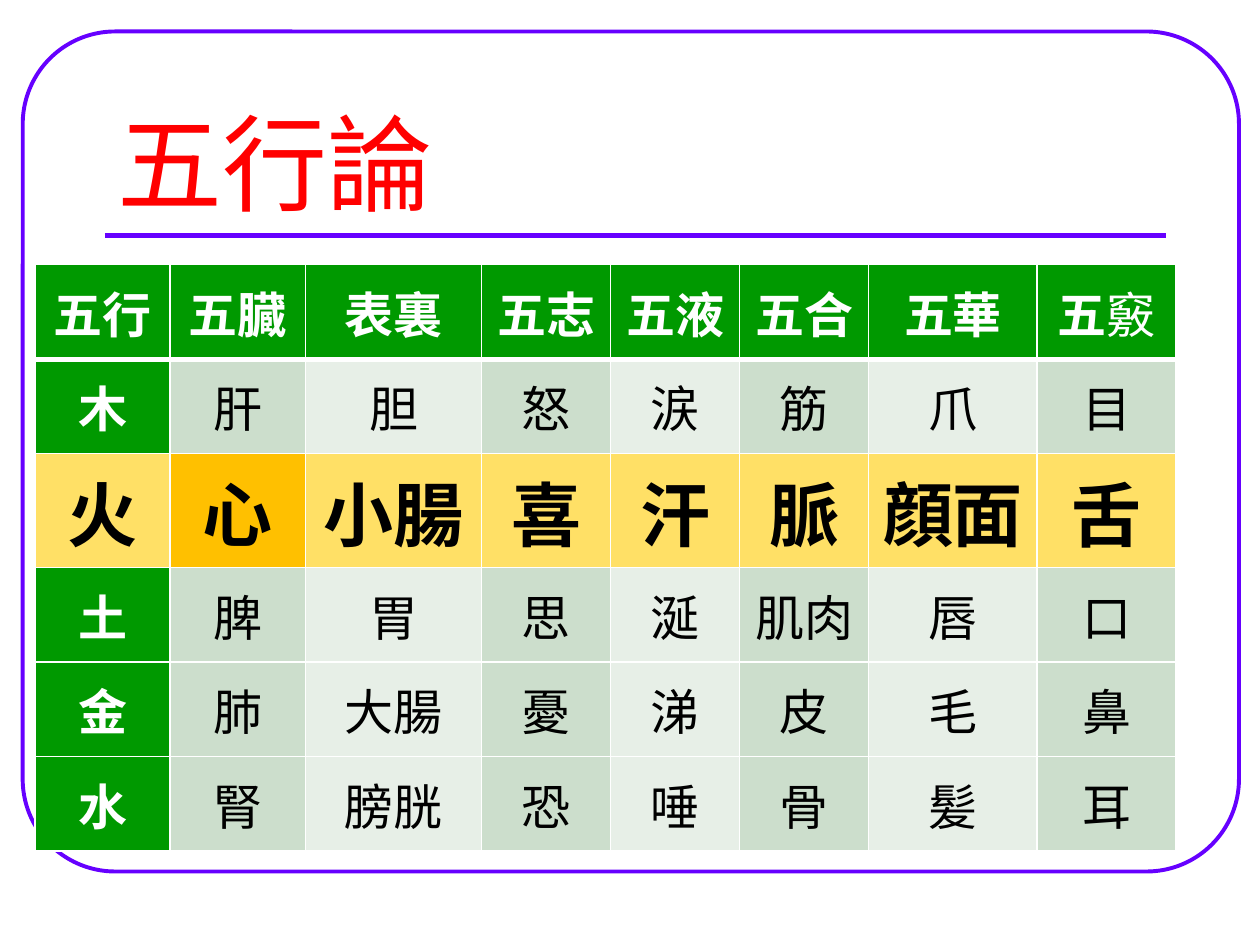
"""Build the five-elements theory slide with its framed table."""
import pptx
import pptx.util
import pptx.dml.color
import pptx.enum.shapes
import pptx.enum.text
import pptx.oxml
import pptx.oxml.ns

Pt = pptx.util.Pt


def color(value):
    return pptx.dml.color.RGBColor.from_string(value)


def style_span(span, values):
    span.font.color.rgb = color(values["color"])
    for name in ("name", "size", "bold"):
        setattr(span.font, name, values[name])


deck = pptx.Presentation()
deck.slide_width, deck.slide_height = Pt(720), Pt(540)
page = deck.slides.add_slide(deck.slide_layouts[5])

frame = page.shapes.add_shape(
    pptx.enum.shapes.MSO_SHAPE.ROUNDED_RECTANGLE, Pt(13), Pt(18), Pt(695), Pt(480))
frame.adjustments[0] = 0.11
frame.shadow.inherit = False
frame.fill.background()
frame.line.color.rgb = color("6600FF")
frame.line.width = Pt(2.25)

rule = page.shapes.add_connector(
    pptx.enum.shapes.MSO_CONNECTOR.STRAIGHT, Pt(60), Pt(134.75), Pt(666), Pt(134.75))
rule.line.color.rgb = color("6600FF")
rule.line.width = Pt(3)
rule._element.spPr.append(pptx.oxml.parse_xml(
    f"<a:effectLst {pptx.oxml.ns.nsdecls('a')}/>"))

title = page.shapes.title
title_box = {"left": Pt(60), "top": Pt(42), "width": Pt(606), "height": Pt(90)}
for name, value in title_box.items():
    setattr(title, name, value)
title.text_frame.vertical_anchor = pptx.enum.text.MSO_ANCHOR.BOTTOM
title_para = title.text_frame.paragraphs[0]
title_para.alignment = pptx.enum.text.PP_ALIGN.LEFT
title_span = title_para.add_run()
title_span.text = "五行論"
style_span(title_span, {"name": "Montserrat", "size": Pt(60), "bold": False, "color": "FF0000"})

rows = [
    ["五行", "五臓", "表裏", "五志", "五液", "五合", "五華", "五竅"],
    ["木", "肝", "胆", "怒", "涙", "筋", "爪", "目"],
    ["火", "心", "小腸", "喜", "汗", "脈", "顔面", "舌"],
    ["土", "脾", "胃", "思", "涎", "肌肉", "唇", "口"],
    ["金", "肺", "大腸", "憂", "涕", "皮", "毛", "鼻"],
    ["水", "腎", "膀胱", "恐", "唾", "骨", "髪", "耳"],
]
column_widths = [77.25, 77.25, 100.75, 73.75, 73.75, 73.75, 96.25, 79.25]
fire_row = 2
header_format = {"name": "Arial", "size": Pt(28), "bold": True, "color": "FFFFFF"}
body_format = {**header_format, "bold": False, "color": "000000"}
fire_format = {**body_format, "size": Pt(40), "bold": True}

table = page.shapes.add_table(
    len(rows), len(column_widths), Pt(20), Pt(151.25), Pt(sum(column_widths)), Pt(324)).table
for column, width in zip(table.columns, column_widths):
    column.width = Pt(width)

for row_index, row in enumerate(rows):
    table.rows[row_index].height = Pt(54)
    for column_index, text in enumerate(row):
        if row_index == fire_row:
            fill, values = "FFC000" if column_index == 1 else "FFE066", fire_format
        elif row_index == 0 or column_index == 0:
            fill, values = "009900", header_format
        else:
            fill, values = "CCDECC" if column_index % 2 else "E7EFE7", body_format

        cell = table.cell(row_index, column_index)
        cell.vertical_anchor = pptx.enum.text.MSO_ANCHOR.MIDDLE
        border_widths = {"L": 1, "R": 1, "T": 3 if row_index == 1 else 1,
                         "B": 3 if row_index == 0 else 1}
        for side, width in border_widths.items():
            cell._tc.get_or_add_tcPr().append(pptx.oxml.parse_xml(
                f'<a:ln{side} {pptx.oxml.ns.nsdecls("a")} w="{Pt(width)}">'
                f'<a:solidFill><a:srgbClr val="FFFFFF"/></a:solidFill></a:ln{side}>'))
        cell.fill.solid()
        cell.fill.fore_color.rgb = color(fill)

        para = cell.text_frame.paragraphs[0]
        para.alignment = pptx.enum.text.PP_ALIGN.CENTER
        for part in ("五", "竅") if text == "五竅" else (text,):
            span = para.add_run()
            span.text = part
            style_span(span, {**values, "bold": values["bold"] and part != "竅"})

deck.save("out.pptx")
